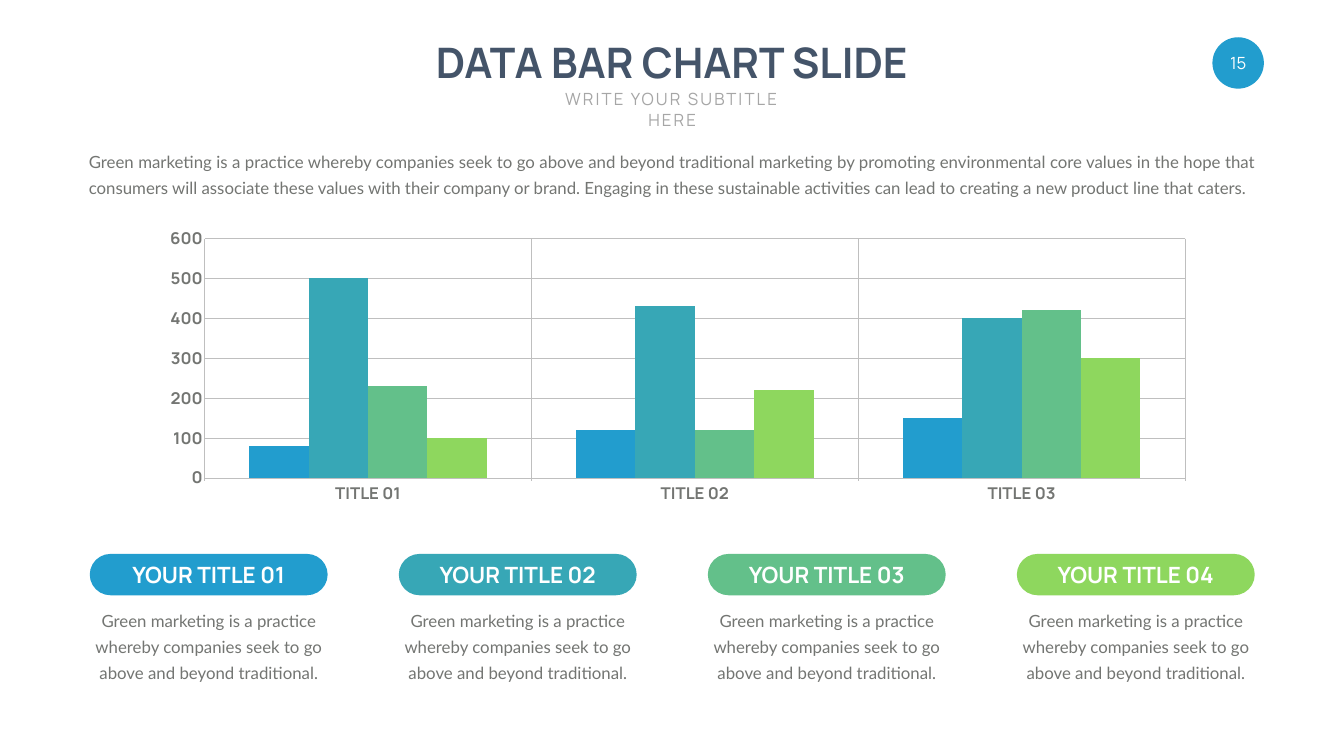
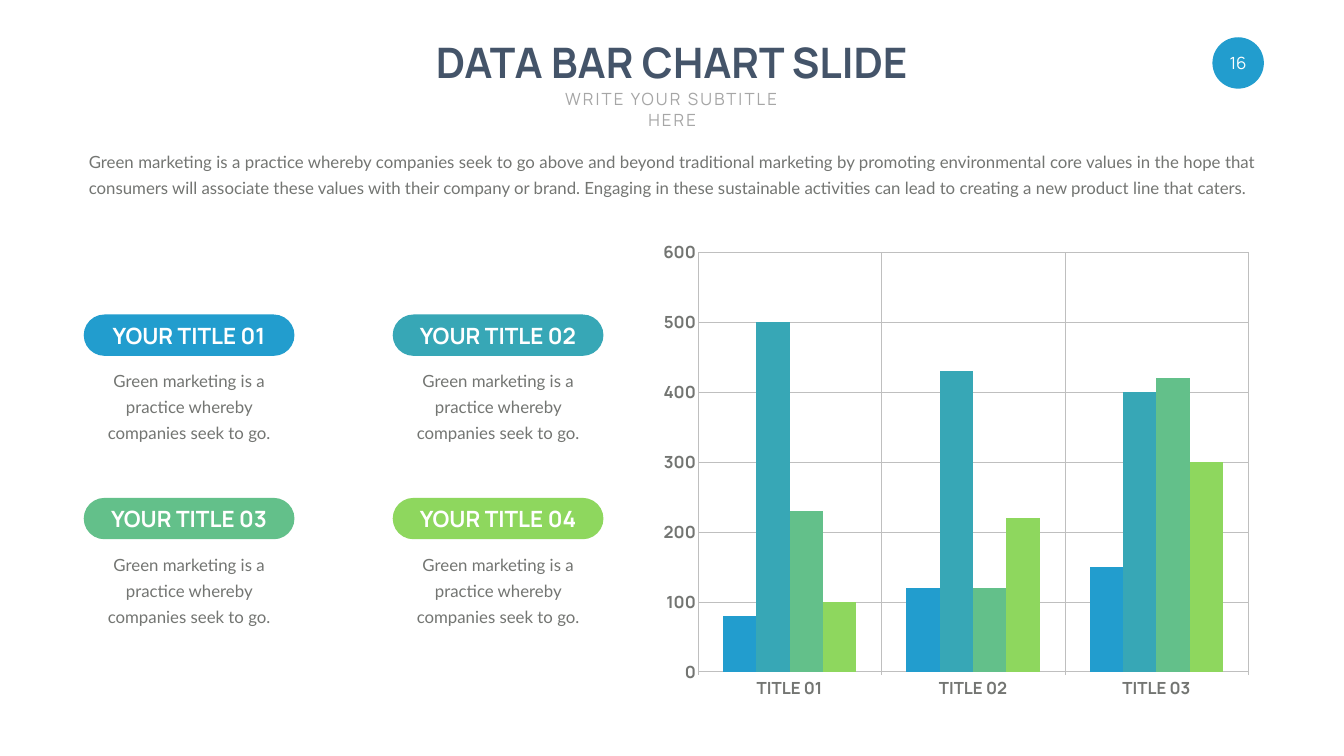
import dataclasses
import lxml.etree
import pptx
import pptx.chart.data
import pptx.dml.color
import pptx.enum.chart
import pptx.enum.shapes
import pptx.enum.text
import pptx.oxml.ns
import pptx.util

Pt = pptx.util.Pt
Align = pptx.enum.text.PP_ALIGN
Anchor = pptx.enum.text.MSO_ANCHOR
Shape = pptx.enum.shapes.MSO_SHAPE
Tick = pptx.enum.chart.XL_TICK_MARK
qn = pptx.oxml.ns.qn

WIDE = pptx.util.Inches(26.66)
HIGH = pptx.util.Inches(15)


@dataclasses.dataclass(frozen=True)
class Theme:
    hues: tuple = ("229DCE", "37A7B6", "63C08A", "8ED75E")
    navy: str = "445469"
    pale: str = "A6A6A6"
    text: str = "737572"
    white: str = "FFFFFF"
    rule: str = "BFBFBF"
    label: str = "B9BAB8"
    head: str = "Manrope"
    body: str = "Lato"
    plain: str = "Calibri"
    big: int = 60
    mid: int = 32
    base: int = 24
    small: int = 18
    lead: int = 37


THEME = Theme()

TITLE = "DATA BAR CHART SLIDE"
SUB = "WRITE YOUR SUBTITLE HERE"
INTRO = (
    "Green marketing is a practice whereby companies seek to go above and beyond "
    "traditional marketing by promoting environmental core values in the hope that "
    "consumers will associate these values with their company or brand. Engaging in "
    "these sustainable activities can lead to creating a new product line that caters."
)
LONG = "Green marketing is a practice whereby companies seek to go above and beyond traditional."
SHORT = "Green marketing is a practice whereby companies seek to go."
CATS = ["TITLE 01", "TITLE 02", "TITLE 03"]
ROWS = [(80, 120, 150), (500, 430, 400), (230, 120, 420), (100, 220, 300)]

TITLE_BOX = (31.28, 4.47, 37.4, 7.4)
SUB_BOX = (39.83, 11.47, 20.37, 3.33)
BADGE_BOX = (90.21, 4.93, 3.83, 6.8)
INTRO_BOX = (6.23, 18.93, 87.51, 7.2)
PILL = 5.47
DROP = 6.4
NOTE = 10.67
PLOT = {"x": 0.06, "y": 0.02, "w": 0.92, "h": 0.89}


def share(box):
    x, y, w, h = box
    return [int(part * side / 100) for part, side in ((x, WIDE), (y, HIGH), (w, WIDE), (h, HIGH))]


def apply(item, **vals):
    for name, val in vals.items():
        setattr(item, name, val)


def rgb(hue):
    return pptx.dml.color.RGBColor.from_string(hue)


def paint(fill, hue):
    fill.solid()
    fill.fore_color.rgb = rgb(hue)


def style(font, hue, **vals):
    apply(font, **vals)
    font.color.rgb = rgb(hue)


def write(shape, text, hue, size, face, bold=False, align=Align.CENTER,
          anchor=Anchor.TOP, wrap=True, lead=None):
    frame = shape.text_frame
    apply(frame, word_wrap=wrap, vertical_anchor=anchor,
          auto_size=pptx.enum.text.MSO_AUTO_SIZE.NONE)
    line = frame.paragraphs[0]
    line.alignment = align
    if lead:
        line.line_spacing = Pt(lead)
    run = line.add_run()
    run.text = text
    style(run.font, hue, size=Pt(size), name=face, bold=bold)
    return line


def place(shape, box):
    apply(shape, **dict(zip(("left", "top", "width", "height"), share(box))))


def solid(slide, kind, box, hue):
    shape = slide.shapes.add_shape(kind, *share(box))
    shape.shadow.inherit = False
    paint(shape.fill, hue)
    shape.line.fill.background()
    return shape


def header(slide, page):
    badge = solid(slide, Shape.OVAL, BADGE_BOX, THEME.hues[0])
    apply(badge.text_frame, margin_left=0, margin_right=0, margin_top=0, margin_bottom=0)
    write(badge, str(page), THEME.white, THEME.base, THEME.head, anchor=Anchor.MIDDLE)

    title = slide.shapes.title
    place(title, TITLE_BOX)
    write(title, TITLE, THEME.navy, THEME.big, THEME.head, bold=True, wrap=False)

    sub = slide.shapes.add_textbox(*share(SUB_BOX))
    line = write(sub, SUB, THEME.pale, THEME.base, THEME.head)
    line.runs[0].font._element.set("spc", "300")

    intro = slide.placeholders[1]
    place(intro, INTRO_BOX)
    line = write(intro, INTRO, THEME.text, THEME.base, THEME.body,
                 align=Align.JUSTIFY, lead=THEME.lead)
    props = line._p.get_or_add_pPr()
    for name in ("marL", "indent"):
        props.set(name, "0")
    lxml.etree.SubElement(props, qn("a:buNone"))


def card(slide, box, num, note):
    x, y, w, h = box
    pill = solid(slide, Shape.ROUNDED_RECTANGLE, (x, y, w, PILL), THEME.hues[num])
    pill.adjustments[0] = 0.5
    write(pill, f"YOUR TITLE {num + 1:02}", THEME.white, THEME.mid, THEME.head,
          bold=True, anchor=Anchor.MIDDLE, wrap=False)
    text = slide.shapes.add_textbox(*share((x, y + DROP, w, h - DROP)))
    write(text, note, THEME.text, THEME.base, THEME.body, lead=THEME.lead)


def cards(slide, box, cols, wide, note):
    x, y, w, h = box
    tall = DROP + NOTE
    rows = len(THEME.hues) // cols
    across = (w - wide) / (cols - 1)
    down = (h - tall) / max(rows - 1, 1)
    for num in range(len(THEME.hues)):
        row, col = divmod(num, cols)
        card(slide, (x + col * across, y + row * down, wide, tall), num, note)


def inset(chart):
    area = chart._chartSpace.chart.plotArea
    for old in area.findall(qn("c:layout")):
        area.remove(old)
    frame = lxml.etree.Element(qn("c:layout"))
    area.insert(0, frame)
    manual = lxml.etree.SubElement(frame, qn("c:manualLayout"))
    vals = {"layoutTarget": "inner", "xMode": "edge", "yMode": "edge", **PLOT}
    for name, val in vals.items():
        lxml.etree.SubElement(manual, qn("c:" + name)).set("val", str(val))


def bars(slide, box):
    data = pptx.chart.data.CategoryChartData()
    data.categories = CATS
    for num, vals in enumerate(ROWS, 1):
        data.add_series(f"Series {num}", vals)
    kind = pptx.enum.chart.XL_CHART_TYPE.COLUMN_CLUSTERED
    chart = slide.shapes.add_chart(kind, *share(box), data).chart
    apply(chart, has_title=False, has_legend=False)
    style(chart.font, THEME.label, size=Pt(THEME.small), name=THEME.plain)
    plot = chart.plots[0]
    apply(plot, gap_width=150, overlap=0, vary_by_categories=False)
    for row, hue in zip(plot.series, THEME.hues):
        paint(row.format.fill, hue)
    apply(chart.value_axis, minimum_scale=0, maximum_scale=600, major_unit=100)
    for axis, tick in ((chart.category_axis, Tick.OUTSIDE), (chart.value_axis, Tick.NONE)):
        apply(axis, has_major_gridlines=True, major_tick_mark=tick, minor_tick_mark=Tick.NONE)
        style(axis.tick_labels.font, THEME.text, size=Pt(THEME.base), name=THEME.head, bold=True)
        for line in (axis.format.line, axis.major_gridlines.format.line):
            line.width = Pt(0.75)
            paint(line.fill, THEME.rule)
    inset(chart)


def wide_page(slide):
    bars(slide, (10.47, 30.07, 79.29, 36.73))
    cards(slide, (6.68, 73.27, 86.68, 17.07), 4, 17.7, LONG)


def split_page(slide):
    bars(slide, (49.25, 31.87, 44.52, 62.6))
    cards(slide, (6.23, 41.6, 38.67, 41.33), 2, 15.68, SHORT)


def main():
    deck = pptx.Presentation()
    apply(deck, slide_width=WIDE, slide_height=HIGH)
    for page, build in enumerate((wide_page, split_page), 15):
        slide = deck.slides.add_slide(deck.slide_layouts[1])
        paint(slide.background.fill, THEME.white)
        header(slide, page)
        build(slide)
    deck.save("out.pptx")


if __name__ == "__main__":
    main()
